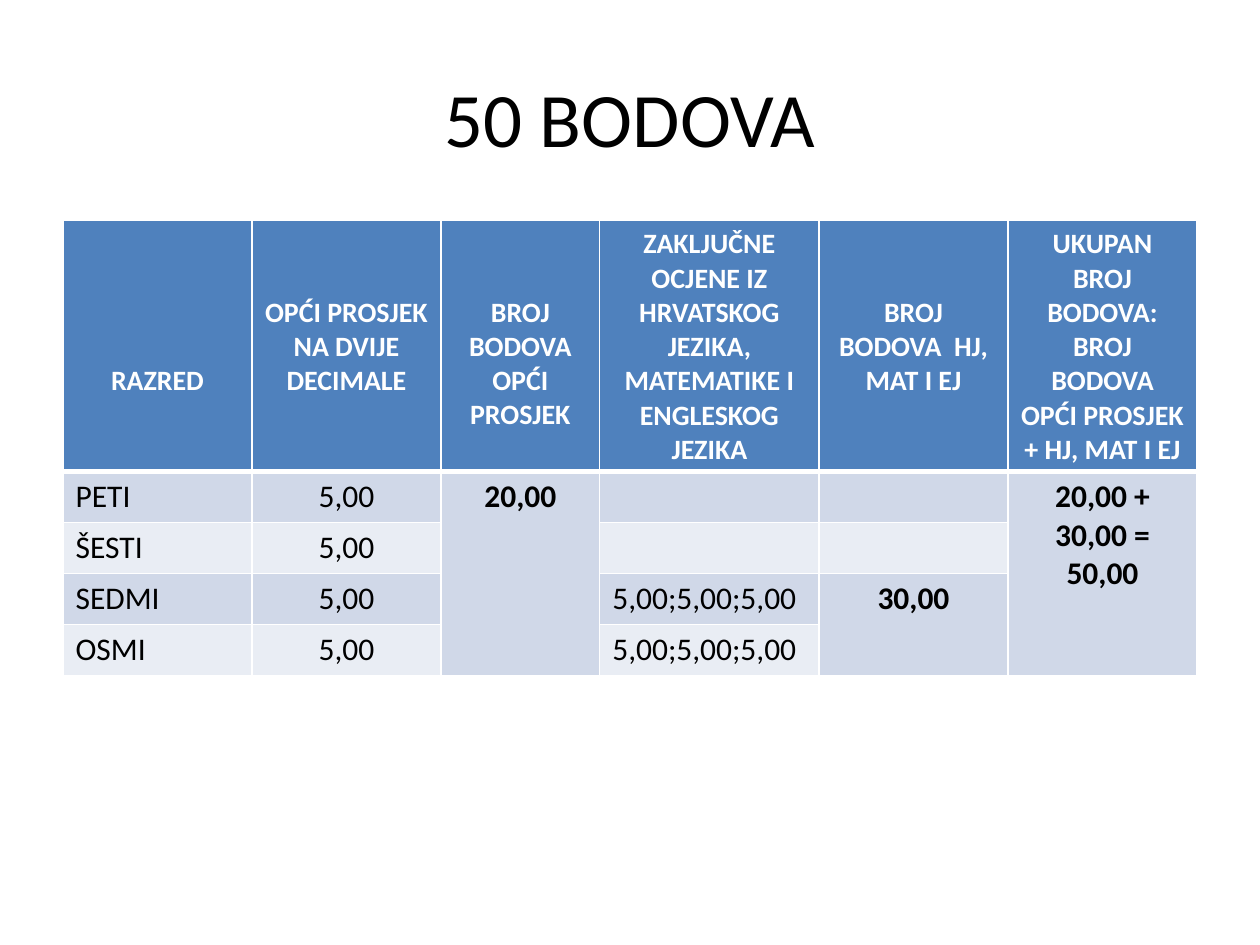
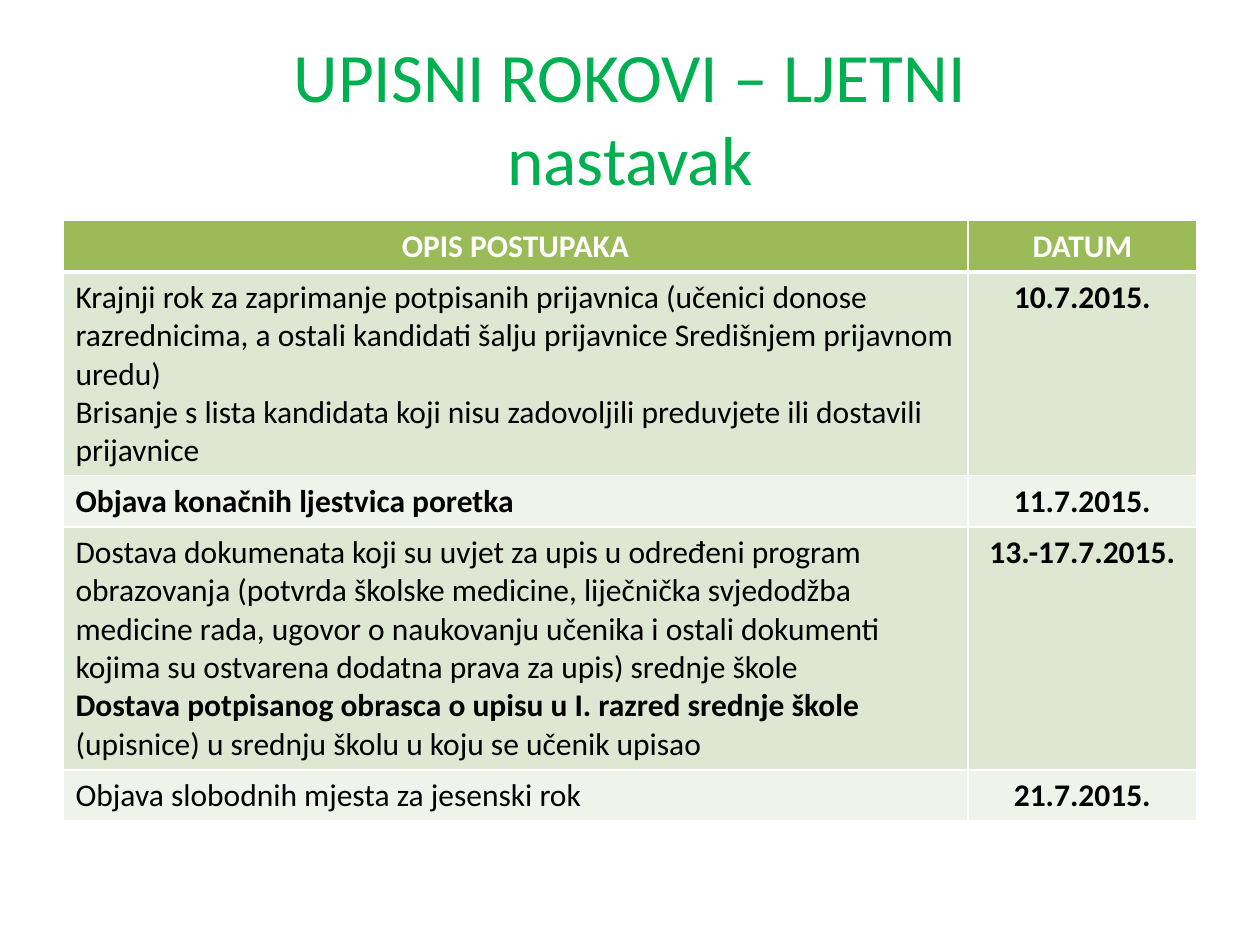
from dataclasses import dataclass
from lxml import etree
from pptx import Presentation
from pptx.dml.color import RGBColor
from pptx.enum.text import MSO_ANCHOR as Anchor, PP_ALIGN as Align
from pptx.oxml.ns import qn
from pptx.util import Cm, Pt

FONT = "Calibri"
COLORS = {
    "white": "FFFFFF", "black": "000000", "green": "00B050",
    "blue_head": "4F81BD", "blue_odd": "D0D8E8", "blue_even": "E9EDF4",
    "olive_head": "9BBB59", "olive_odd": "DEE7D1", "olive_even": "EFF3EA",
}
HEADER_LINE = 0.69  # cm, height of one 16 pt line
ROW = 1.03  # cm, height of a one-line row


@dataclass
class Box:
    left: float
    top: float
    width: float
    height: float

    def lengths(self):
        return Cm(self.left), Cm(self.top), Cm(self.width), Cm(self.height)


TITLE_BOX = Box(1.27, 0.76, 22.86, 3.18)
TABLE_BOX = Box(1.27, 4.45, 22.86, 0)


def style_run(run, size, color, bold=False):
    run.font.name = FONT
    run.font.size = Pt(size)
    run.font.bold = bold
    run.font.color.rgb = RGBColor.from_string(COLORS[color])


def add_title(slide, box, text, size, color):
    frame = slide.shapes.add_textbox(*box.lengths()).text_frame
    frame.word_wrap = True
    frame.vertical_anchor = Anchor.MIDDLE
    frame.text = text
    paragraph = frame.paragraphs[0]
    paragraph.alignment = Align.CENTER
    for run in paragraph.runs:
        style_run(run, size, color)


def write_cell(cell, text, size, color, alignment, bold=False):
    """Fill a cell; ** switches bold on and off, a newline starts a paragraph."""
    cell.text_frame.text = text
    for paragraph in cell.text_frame.paragraphs:
        paragraph.alignment = alignment
        paragraph.font.size = Pt(size)
        pieces = paragraph.text.split("**")
        paragraph.text = ""
        for index, piece in enumerate(pieces):
            if piece:
                run = paragraph.add_run()
                run.text = piece
                style_run(run, size, color, bold or index % 2 == 1)


def set_borders(cell, top, bottom):
    """Draw white borders; they have to come before the fill in the XML."""
    properties = cell._tc.get_or_add_tcPr()
    sides = {"lnL": 1, "lnR": 1, "lnT": top, "lnB": bottom}
    for index, (side, width) in enumerate(sides.items()):
        line = etree.Element(qn(f"a:{side}"), w=str(Pt(width)))
        fill = etree.SubElement(line, qn("a:solidFill"))
        etree.SubElement(fill, qn("a:srgbClr"), val=COLORS["white"])
        properties.insert(index, line)


def add_table(slide, box, theme, widths, heights, header, rows, header_size,
              left_columns, merges=(), header_offsets=None):
    shape = slide.shapes.add_table(
        len(heights), len(widths), Cm(box.left), Cm(box.top),
        Cm(box.width), Cm(sum(heights)))
    table = shape.table
    for column, width in zip(table.columns, widths):
        column.width = Cm(width)
    for row, height in zip(table.rows, heights):
        row.height = Cm(height)

    # Header row
    offsets = header_offsets or [0] * len(header)
    for column, (text, offset) in enumerate(zip(header, offsets)):
        cell = table.cell(0, column)
        write_cell(cell, text, header_size, "white", Align.CENTER, bold=True)
        cell.margin_top = Cm(0.13 + offset * HEADER_LINE)

    # Body rows
    for row, texts in enumerate(rows, start=1):
        for column, text in enumerate(texts):
            alignment = Align.LEFT if column in left_columns else Align.CENTER
            write_cell(table.cell(row, column), text, 18, "black", alignment)

    # Fills, borders and merged cells
    for row in range(len(heights)):
        band = "head" if row == 0 else "odd" if row % 2 else "even"
        for column in range(len(widths)):
            cell = table.cell(row, column)
            cell.fill.solid()
            cell.fill.fore_color.rgb = RGBColor.from_string(COLORS[f"{theme}_{band}"])
            set_borders(cell, top=3 if row == 1 else 1, bottom=3 if row == 0 else 1)
    for first, last in merges:
        table.cell(*first).merge(table.cell(*last))


def build_points_slide(slide):
    add_title(slide, TITLE_BOX, "50 BODOVA", 44, "black")
    marks = "5,00;5,00;5,00"
    add_table(
        slide, TABLE_BOX, "blue",
        widths=[3.81, 3.81, 3.2, 4.42, 3.81, 3.81],
        heights=[5.05] + [ROW] * 4,
        header=[
            "RAZRED",
            "OPĆI PROSJEK NA DVIJE DECIMALE",
            "BROJ BODOVA\nOPĆI PROSJEK",
            "ZAKLJUČNE OCJENE IZ HRVATSKOG JEZIKA, MATEMATIKE I ENGLESKOG JEZIKA",
            "BROJ BODOVA  HJ, MAT I EJ",
            "UKUPAN BROJ BODOVA:\nBROJ BODOVA OPĆI PROSJEK + HJ, MAT I EJ",
        ],
        header_offsets=[4, 2, 2, 0, 2, 0],
        rows=[
            ["PETI", "5,00", "**20,00**", "", "", "**20,00 + 30,00 = 50,00**"],
            ["ŠESTI", "5,00", "", "", "", ""],
            ["SEDMI", "5,00", "", marks, "**30,00**", ""],
            ["OSMI", "5,00", "", marks, "", ""],
        ],
        header_size=16, left_columns={0, 3},
        merges=[((1, 2), (4, 2)), ((3, 4), (4, 4)), ((1, 5), (4, 5))])


def build_deadlines_slide(slide):
    add_title(slide, TITLE_BOX, "UPISNI ROKOVI – LJETNI\vnastavak", 39.6, "green")
    add_table(
        slide, TABLE_BOX, "olive",
        widths=[18.24, 4.62],
        heights=[ROW, 4.11, ROW, 4.9, ROW],
        header=["OPIS POSTUPAKA", "DATUM"],
        rows=[
            ["Krajnji rok za zaprimanje potpisanih prijavnica (učenici donose "
             "razrednicima, a ostali kandidati šalju prijavnice Središnjem "
             "prijavnom uredu)\n"
             "Brisanje s lista kandidata koji nisu zadovoljili preduvjete ili "
             "dostavili prijavnice", "**10.7.2015.**"],
            ["**Objava konačnih ljestvica poretka**", "**11.7.2015.**"],
            ["Dostava dokumenata koji su uvjet za upis u određeni program "
             "obrazovanja (potvrda školske medicine, liječnička svjedodžba "
             "medicine rada, ugovor o naukovanju učenika i ostali dokumenti "
             "kojima su ostvarena dodatna prava za upis) srednje škole\n"
             "**Dostava potpisanog obrasca o upisu u I. razred srednje škole **"
             "(upisnice) u srednju školu u koju se učenik upisao",
             "**13.-17.7.2015.**"],
            ["Objava slobodnih mjesta za jesenski rok", "**21.7.2015.**"],
        ],
        header_size=18, left_columns={0})


def main():
    presentation = Presentation()
    presentation.slide_width, presentation.slide_height = Cm(25.4), Cm(19.05)
    blank = presentation.slide_layouts[6]
    for build in (build_points_slide, build_deadlines_slide):
        build(presentation.slides.add_slide(blank))
    presentation.save("out.pptx")


if __name__ == "__main__":
    main()
